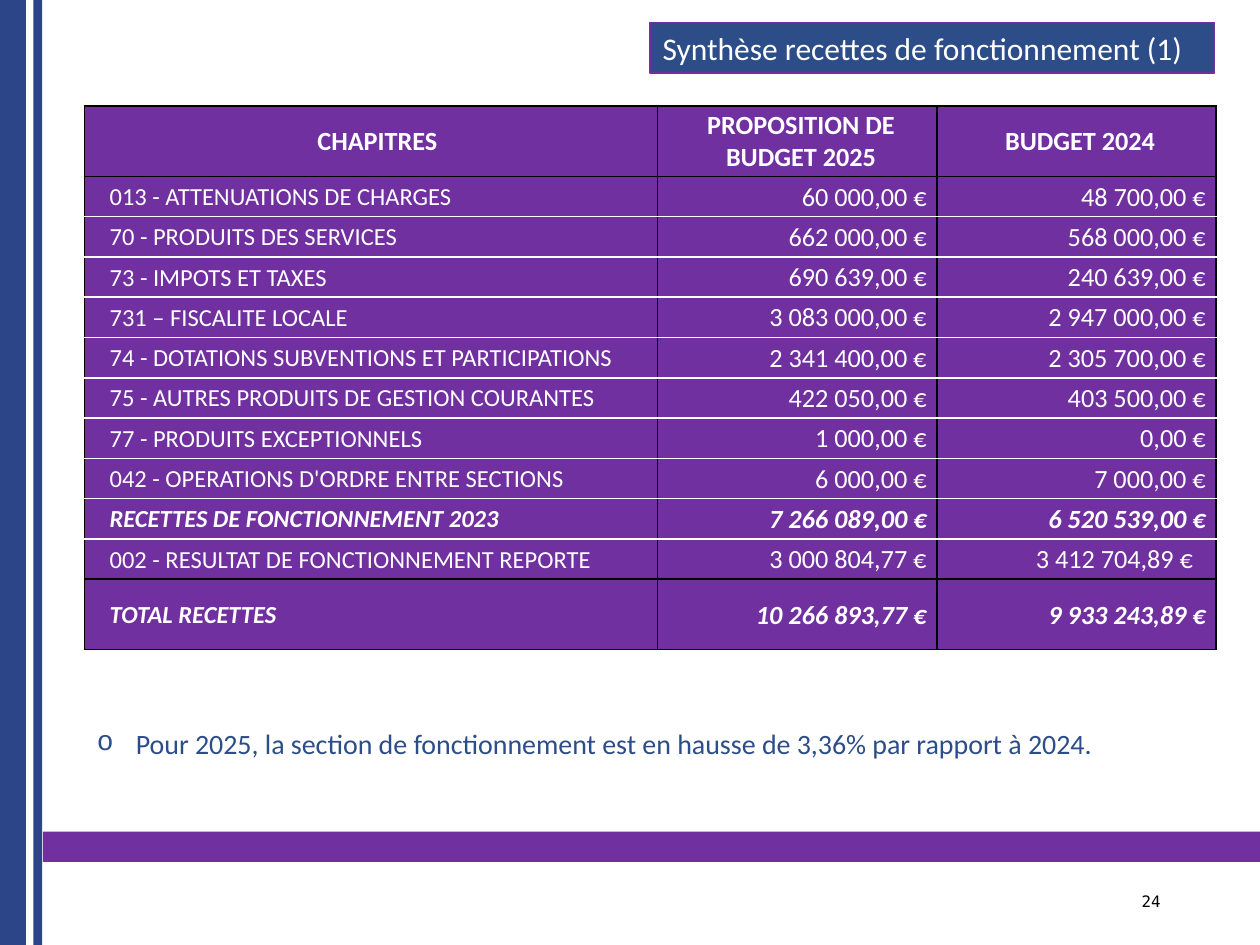
from lxml import etree
from pptx import Presentation
from pptx import util as u
from pptx.dml.color import RGBColor
from pptx.enum import shapes, text
from pptx.oxml import ns

PURPLE = RGBColor(0x70, 0x30, 0xA0)
NAVY = RGBColor(0x2C, 0x45, 0x88)
BLUE = RGBColor(0x2C, 0x4D, 0x88)
WHITE = RGBColor(0xFF, 0xFF, 0xFF)
BLACK = RGBColor(0, 0, 0)

# Layout grid: 100 columns by 75 rows of square cells
COLS, ROWS = 100, 75
CELL = u.Inches(0.1)

FONT = "Calibri"
COL_WIDTHS = (45.5, 22.15, 22.15)
ROW_HEIGHT, TALL_ROW = 3.2, 5.6

HEADER = ("CHAPITRES", "PROPOSITION DE BUDGET 2025", "BUDGET 2024")
CHAPTERS = (
    ("013 - ATTENUATIONS DE CHARGES", "60 000,00 €", "48 700,00 €"),
    ("70 - PRODUITS DES SERVICES", "662 000,00 €", "568 000,00 €"),
    ("73 - IMPOTS ET TAXES", "690 639,00 €", "240 639,00 €"),
    ("731 – FISCALITE LOCALE", "3 083 000,00 €", "2 947 000,00 €"),
    ("74 - DOTATIONS SUBVENTIONS ET PARTICIPATIONS", "2 341 400,00 €", "2 305 700,00 €"),
    ("75 - AUTRES PRODUITS DE GESTION COURANTES", "422 050,00 €", "403 500,00 €"),
    ("77 - PRODUITS EXCEPTIONNELS", "1 000,00 €", "0,00 €"),
    ("042 - OPERATIONS D'ORDRE ENTRE SECTIONS", "6 000,00 €", "7 000,00 €"),
    ("RECETTES DE FONCTIONNEMENT 2023", "7 266 089,00 €", "6 520 539,00 €"),
    ("002 - RESULTAT DE FONCTIONNEMENT REPORTE", "3 000 804,77 €", "3 412 704,89 €"),
    ("TOTAL RECETTES", "10 266 893,77 €", "9 933 243,89 €"),
)
TOTAL_LABELS = ("RECETTES DE FONCTIONNEMENT 2023", "TOTAL RECETTES")


def grid(*lengths):
    return [int(n * CELL) for n in lengths]


def add_run(p, words, size, color, font=FONT, bold=False, italic=False):
    r = p.add_run()
    r.text = words
    r.font.name, r.font.size = font, u.Pt(size)
    r.font.bold, r.font.italic = bold, italic
    r.font.color.rgb = color


def add_bar(s, x, y, w, h, color):
    sp = s.shapes.add_shape(shapes.MSO_SHAPE.RECTANGLE, *grid(x, y, w, h))
    sp.shadow.inherit = False
    sp.fill.solid()
    sp.fill.fore_color.rgb = color
    sp.line.fill.background()
    return sp


def add_text(s, x, y, w, h, anchor, align):
    tf = s.shapes.add_textbox(*grid(x, y, w, h)).text_frame
    tf.word_wrap = True
    tf.vertical_anchor = anchor
    p = tf.paragraphs[0]
    p.alignment = align
    return p


def add_title(s, words):
    sp = add_bar(s, 51.6, 1.8, 44.8, 4, BLUE)
    sp.line.color.rgb = PURPLE
    sp.line.width = u.Pt(0.75)
    tf = sp.text_frame
    tf.word_wrap = True
    p = tf.paragraphs[0]
    p.alignment = text.PP_ALIGN.LEFT
    add_run(p, words, 18, WHITE)


def set_bullet(p, char, indent):
    pPr = p._p.get_or_add_pPr()
    pPr.set("marL", str(indent))
    pPr.set("indent", str(-indent))
    etree.SubElement(pPr, ns.qn("a:buFont"), typeface="Courier New")
    etree.SubElement(pPr, ns.qn("a:buChar"), char=char)


def set_borders(cell, top, bottom):
    tcPr = cell._tc.get_or_add_tcPr()
    sides = {"lnL": BLACK, "lnR": BLACK, "lnT": top, "lnB": bottom}
    for side, color in sides.items():
        ln = etree.SubElement(tcPr, ns.qn("a:" + side), w=str(u.Pt(1)))
        fill = etree.SubElement(ln, ns.qn("a:solidFill"))
        etree.SubElement(fill, ns.qn("a:srgbClr"), val=str(color))


def fill_cell(cell, words, size, align, left, right, top, bottom, bold, italic):
    set_borders(cell, top, bottom)
    cell.fill.solid()
    cell.fill.fore_color.rgb = PURPLE
    cell.vertical_anchor = text.MSO_ANCHOR.MIDDLE
    cell.margin_left, cell.margin_right = grid(left, right)
    cell.margin_top, cell.margin_bottom = grid(0.1, 0)
    p = cell.text_frame.paragraphs[0]
    p.alignment = align
    add_run(p, words, size, WHITE, bold=bold, italic=italic)


def add_budget_table(s):
    rows = (HEADER,) + CHAPTERS
    last = len(rows) - 1
    heights = [TALL_ROW if i in (0, last) else ROW_HEIGHT for i in range(len(rows))]
    frame = s.shapes.add_table(len(rows), len(HEADER),
                               *grid(6.7, 8.4, sum(COL_WIDTHS), sum(heights)))
    table = frame.table
    table.first_row = table.horz_banding = False
    for column, width in zip(table.columns, COL_WIDTHS):
        column.width = grid(width)[0]
    for i, (values, height) in enumerate(zip(rows, heights)):
        table.rows[i].height = grid(height)[0]
        total = values[0] in TOTAL_LABELS
        # Black rules frame the header and the total; white ones part the chapters
        top = BLACK if i in (0, 1, last) else WHITE
        bottom = BLACK if i in (0, last - 1, last) else WHITE
        for j, words in enumerate(values):
            if i == 0:
                look = (15, text.PP_ALIGN.CENTER, 0.8 if j else 1.2, 0.2)
            elif j == 0:
                look = (14, text.PP_ALIGN.LEFT, 2, 0.2)
            else:
                # The carried-over 2024 result sits slightly further left
                look = (15, text.PP_ALIGN.RIGHT, 0.8, 1.8 if (i, j) == (last - 1, 2) else 0.8)
            fill_cell(table.cell(i, j), words, *look, top, bottom,
                      bold=total or i == 0, italic=total)


def main():
    prs = Presentation()
    prs.slide_width, prs.slide_height = grid(COLS, ROWS)
    s = prs.slides.add_slide(prs.slide_layouts[6])

    # Frame: footer band and two bars on the left edge
    add_bar(s, 3.4, 66, COLS - 3.4, 2.4, PURPLE)
    add_bar(s, 0, 0, 2.05, ROWS, NAVY)
    add_bar(s, 2.65, 0, 0.7, ROWS, NAVY)

    # Slide number
    p = add_text(s, 70.6, 69.5, 22.5, 4, text.MSO_ANCHOR.MIDDLE, text.PP_ALIGN.RIGHT)
    add_run(p, "24", 9, BLACK, font="DejaVu Sans Mono")

    # Content
    add_budget_table(s)
    add_title(s, "Synthèse recettes de fonctionnement (1)")

    # Comment under the table
    p = add_text(s, 6.7, 54.4, 89, 6.4, text.MSO_ANCHOR.BOTTOM, text.PP_ALIGN.JUSTIFY)
    set_bullet(p, "o", grid(3.1)[0])
    add_run(p, "Pour 2025, la section de fonctionnement est en hausse de 3,36% "
               "par rapport à 2024.", 16, BLUE)

    prs.save("out.pptx")


if __name__ == "__main__":
    main()
